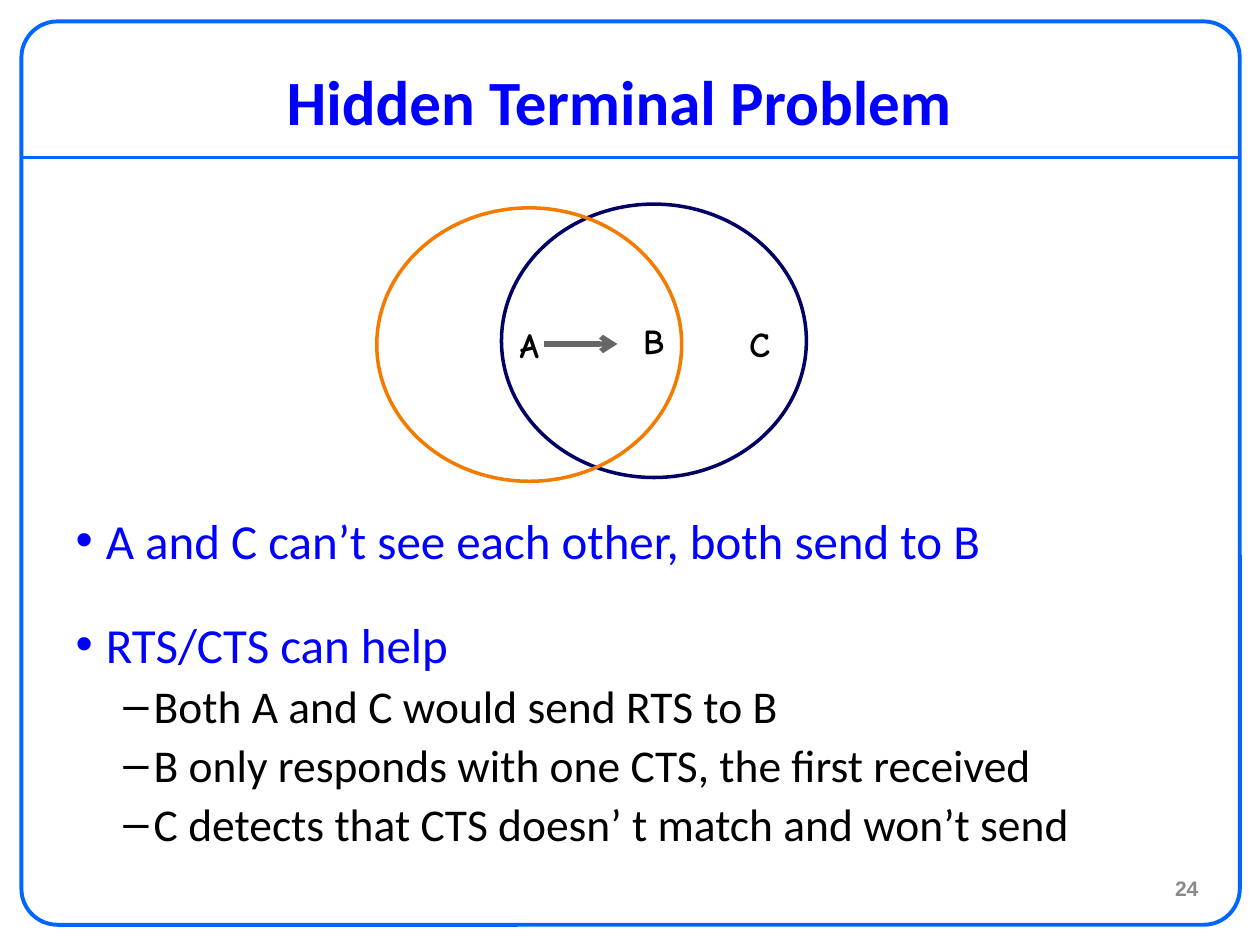
from lxml import etree
from pptx import Presentation
from pptx.dml.color import RGBColor
from pptx.enum import shapes, text
from pptx.oxml import ns
from pptx.util import Inches, Pt

COLORS = {
    "frame": "0066FF", "heading": "0000FF", "text": "000000", "number": "898989",
    "navy": "000066", "orange": "F47A00", "arrow": "666666",
}


def write(para, words, font="Calibri", size=28, color="text", bold=False,
          align=text.PP_ALIGN.LEFT):
    para.alignment = align
    span = para.add_run()
    span.text = words
    span.font.name = font
    span.font.size = Pt(size)
    span.font.bold = bold
    span.font.color.rgb = RGBColor.from_string(COLORS[color])


def add_line(x1, x2, y, color, width, arrow=False):
    line = page.shapes.add_connector(
        shapes.MSO_CONNECTOR.STRAIGHT, Inches(x1), Inches(y), Inches(x2), Inches(y))
    line.line.color.rgb = RGBColor.from_string(COLORS[color])
    line.line.width = Pt(width)
    if arrow:
        etree.SubElement(line.line._get_or_add_ln(), ns.qn("a:tailEnd"), type="arrow")
    etree.SubElement(line._element.spPr, ns.qn("a:effectLst"))


deck = Presentation()
deck.slide_width, deck.slide_height = Inches(10), Inches(7.5)
page = deck.slides.add_slide(deck.slide_layouts[1])
title, body = page.placeholders

# Frame and rule under the title
add_line(0.17, 9.83, 1.25, "frame", 2.25)
frame = page.shapes.add_shape(
    shapes.MSO_SHAPE.ROUNDED_RECTANGLE,
    Inches(0.17), Inches(0.17), Inches(9.67), Inches(7.17))
frame.adjustments[0] = 0.04
frame.shadow.inherit = False
frame.fill.background()
frame.line.color.rgb = RGBColor.from_string(COLORS["frame"])
frame.line.width = Pt(2.25)

# Title
title.left, title.top = Inches(0.33), Inches(0.42)
title.width, title.height = Inches(9.17), Inches(0.75)
title.text_frame.vertical_anchor = text.MSO_ANCHOR.MIDDLE
write(title.text_frame.paragraphs[0], "Hidden Terminal Problem", size=36,
      color="heading", bold=True, align=text.PP_ALIGN.CENTER)

# Bullet list: level, words, space before, space after
points = [
    (0, "A and C can’t see each other, both send to B", 0, 12),
    (0, "RTS/CTS can help", 14, 0),
    (1, "Both A and C would send RTS to B", 2.5, 0),
    (1, "B only responds with one CTS, the first received", 2.5, 0),
    (1, "C detects that CTS doesn’ t match and won’t send", 2.5, 0),
]
levels = [("•", 0.24, 28, "heading"), ("–", 0.62, 26, "text")]
body.left, body.top = Inches(0.5), Inches(4)
body.width, body.height = Inches(9.25), Inches(3)
body.text_frame.auto_size = text.MSO_AUTO_SIZE.NONE
for index, (level, words, before, after) in enumerate(points):
    para = body.text_frame.paragraphs[0] if index == 0 else body.text_frame.add_paragraph()
    bullet, indent, size, color = levels[level]
    para.level = level
    para.space_before, para.space_after = Pt(before), Pt(after)
    write(para, words, size=size, color=color)
    props = para._p.get_or_add_pPr()
    props.set("marL", str(Inches(indent)))
    props.set("indent", str(Inches(-0.24)))
    etree.SubElement(props, ns.qn("a:buFont"), typeface="Arial")
    etree.SubElement(props, ns.qn("a:buChar"), char=bullet)

# Slide number
number = page.shapes.add_textbox(Inches(7.28), Inches(6.9), Inches(2.33), Inches(0.4))
number.text_frame.word_wrap = True
write(number.text_frame.paragraphs[0], "24", font="Arial", size=12, color="number",
      bold=True, align=text.PP_ALIGN.RIGHT)

# Stations: C is a plain label, B and A are named inside their radio ranges
label = page.shapes.add_textbox(Inches(5.78), Inches(2.53), Inches(0.5), Inches(0.4))
label.text_frame.word_wrap = True
stations = [("C", label)]
for name, left, top, color in [("B", 3.98, 1.62, "navy"), ("A", 2.99, 1.65, "orange")]:
    radio_range = page.shapes.add_shape(
        shapes.MSO_SHAPE.OVAL, Inches(left), Inches(top), Inches(2.42), Inches(2.17))
    radio_range.shadow.inherit = False
    radio_range.fill.background()
    radio_range.line.color.rgb = RGBColor.from_string(COLORS[color])
    radio_range.line.width = Pt(2)
    stations.append((name, radio_range))
for name, box in stations:
    box.text_frame.vertical_anchor = text.MSO_ANCHOR.MIDDLE
    write(box.text_frame.paragraphs[0], name, font="Comic Neue", size=20,
          bold=True, align=text.PP_ALIGN.CENTER)

# Transmission from A to B
add_line(4.32, 4.9, 2.73, "arrow", 3, arrow=True)

deck.save("out.pptx")
